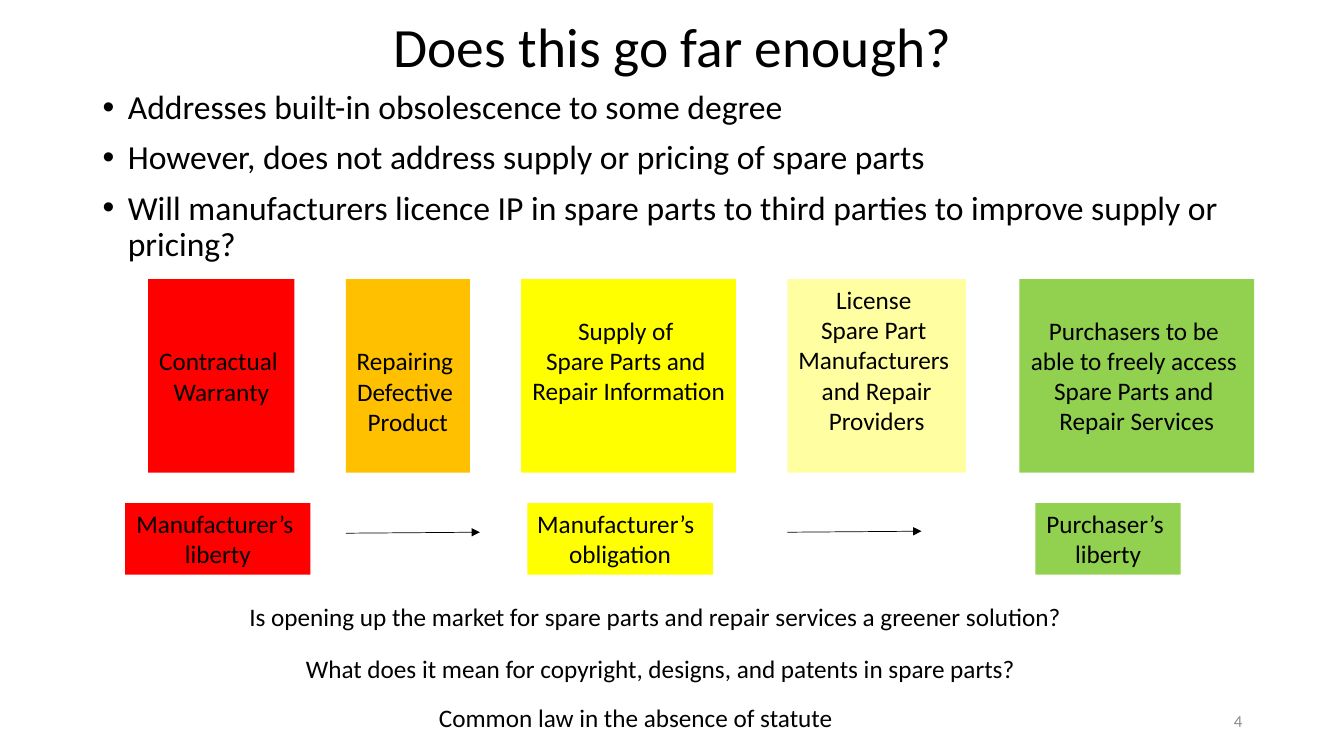
from dataclasses import dataclass

from lxml.etree import SubElement
from pptx import Presentation
from pptx.dml.color import RGBColor
from pptx.enum.shapes import MSO_CONNECTOR, MSO_SHAPE
from pptx.enum.text import MSO_ANCHOR, PP_ALIGN
from pptx.oxml.ns import qn
from pptx.util import Inches, Pt


@dataclass(frozen=True)
class Theme:
    """Colours, font and type sizes of the slide."""
    font: str = "Calibri"
    black: str = "000000"
    grey: str = "8C8C8C"
    red: str = "FF0000"
    orange: str = "FFC000"
    yellow: str = "FFFF00"
    green: str = "92D050"
    title: float = 39.6
    body: float = 24
    label: float = 18
    number: float = 12


THEME = Theme()
LINE_HEIGHT = 0.305
INSET = 0.05
STAGE_TOP, STAGE_HEIGHT = 2.77, 1.92
ROLE_TOP, ROLE_HEIGHT = 4.99, 0.71


def write_lines(frame, lines, size, color=THEME.black, align=PP_ALIGN.CENTER):
    """Write one paragraph per line and return the paragraphs."""
    for index, line in enumerate(lines):
        paragraph = frame.paragraphs[0] if index == 0 else frame.add_paragraph()
        paragraph.text = line
        paragraph.alignment = align
        paragraph.font.name = THEME.font
        paragraph.font.size = Pt(size)
        paragraph.font.color.rgb = RGBColor.from_string(color)
    return frame.paragraphs


def add_text(slide, box, lines, size, anchor=MSO_ANCHOR.TOP, **style):
    """Add a wrapping text box and return its paragraphs."""
    frame = slide.shapes.add_textbox(*map(Inches, box)).text_frame
    frame.word_wrap = True
    frame.vertical_anchor = anchor
    return write_lines(frame, lines, size, **style)


def add_bullets(slide, box, lines):
    """Add a bulleted list with hanging indents."""
    for paragraph in add_text(slide, box, lines, THEME.body, align=PP_ALIGN.LEFT):
        paragraph.line_spacing = 0.9
        paragraph.space_before = Pt(10)
        properties = paragraph._p.get_or_add_pPr()
        properties.set("marL", str(Inches(0.25)))
        properties.set("indent", str(-Inches(0.25)))
        SubElement(properties, qn("a:buFont"), typeface="Arial")
        SubElement(properties, qn("a:buChar"), char="•")


def add_block(slide, box, color, lines, lines_down=0, opacity=100):
    """Add a filled rectangle whose text starts some lines down."""
    shape = slide.shapes.add_shape(MSO_SHAPE.RECTANGLE, *map(Inches, box))
    shape.shadow.inherit = False
    shape.line.fill.background()
    shape.fill.solid()
    shape.fill.fore_color.rgb = RGBColor.from_string(color)
    if opacity < 100:
        fill_color = shape.fill._xPr.find(qn("a:solidFill"))[0]
        SubElement(fill_color, qn("a:alpha"), val=str(opacity * 1000))
    frame = shape.text_frame
    frame.word_wrap = False
    frame.vertical_anchor = MSO_ANCHOR.TOP
    frame.margin_top = Inches(INSET + lines_down * LINE_HEIGHT)
    return write_lines(frame, lines, THEME.label)


def add_arrow(slide, left, top):
    """Add a thin arrow pointing right."""
    ends = (left, top, left + 1.33, top - 0.01)
    arrow = slide.shapes.add_connector(MSO_CONNECTOR.STRAIGHT, *map(Inches, ends))
    arrow.line.color.rgb = RGBColor.from_string(THEME.black)
    arrow.line.width = Pt(0.5)
    SubElement(arrow.line._get_or_add_ln(), qn("a:tailEnd"), type="triangle")
    SubElement(arrow._element.spPr, qn("a:effectLst"))


def main():
    """Build and save the slide."""
    presentation = Presentation()
    presentation.slide_width = Inches(13.33)
    presentation.slide_height = Inches(7.5)
    slide = presentation.slides.add_slide(presentation.slide_layouts[6])

    title = add_text(slide, (0.92, 0.12, 11.5, 0.75), ["Does this go far enough?"],
                     THEME.title, MSO_ANCHOR.MIDDLE)
    title[0].line_spacing = 0.9
    add_bullets(slide, (0.92, 0.85, 11.5, 1.85), [
        "Addresses built-in obsolescence to some degree",
        "However, does not address supply or pricing of spare parts",
        "Will manufacturers licence IP in spare parts to third parties "
        "to improve supply or pricing?",
    ])

    stages = [
        (1.47, 1.45, THEME.red, ["Contractual ", "Warranty"], 2, 100),
        (3.43, 1.23, THEME.orange, ["Repairing ", "Defective ", "Product"], 2, 100),
        (5.17, 2.13, THEME.yellow,
         ["Supply of ", "Spare Parts and ", "Repair Information"], 1, 100),
        (7.81, 1.77, THEME.yellow,
         ["License ", "Spare Part ", "Manufacturers ", "and Repair", "Providers"], 0, 37),
        (10.11, 2.33, THEME.green,
         ["Purchasers to be ", "able to freely access ", "Spare Parts and ",
          "Repair Services"], 1, 100),
    ]
    for left, width, color, lines, lines_down, opacity in stages:
        add_block(slide, (left, STAGE_TOP, width, STAGE_HEIGHT), color, lines,
                  lines_down, opacity)

    roles = [
        (1.24, 1.84, THEME.red, ["Manufacturer’s ", "liberty"], PP_ALIGN.CENTER),
        (5.23, 1.84, THEME.yellow, ["Manufacturer’s", "obligation"], PP_ALIGN.LEFT),
        (10.27, 1.44, THEME.green, ["Purchaser’s ", "liberty"], PP_ALIGN.CENTER),
    ]
    for left, width, color, lines, first_align in roles:
        paragraphs = add_block(slide, (left, ROLE_TOP, width, ROLE_HEIGHT), color, lines)
        paragraphs[0].alignment = first_align
    add_arrow(slide, 3.43, 5.29)
    add_arrow(slide, 7.81, 5.28)

    questions = [
        (2.13, 5.92, 8.74, "Is opening up the market for spare parts and repair "
                           "services a greener solution?"),
        (2.89, 6.43, 7.32, "What does it mean for copyright, designs, and patents "
                           "in spare parts?"),
        (4.23, 6.92, 4.15, "Common law in the absence of statute"),
    ]
    for left, top, width, question in questions:
        add_text(slide, (left, top, width, 0.4), [question], THEME.label)
    add_text(slide, (9.42, 6.95, 3, 0.4), ["4"], THEME.number, MSO_ANCHOR.MIDDLE,
             color=THEME.grey, align=PP_ALIGN.RIGHT)

    presentation.save("out.pptx")


if __name__ == "__main__":
    main()
